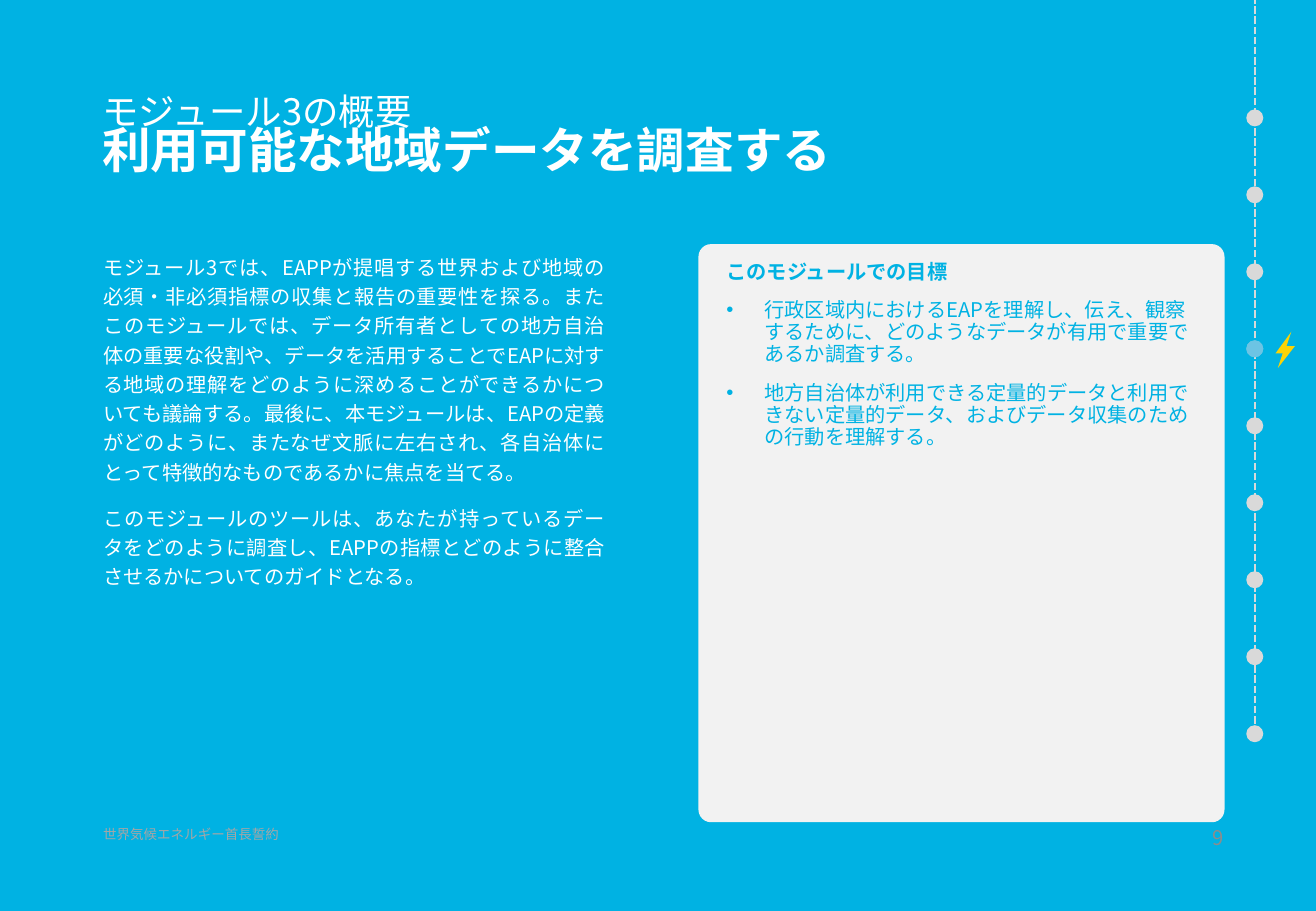
"""Build the Module 3 overview slide with its progress timeline."""
from dataclasses import dataclass

from lxml import etree
from pptx import Presentation
from pptx.dml.color import RGBColor
from pptx.enum.dml import MSO_LINE
from pptx.enum.shapes import MSO_CONNECTOR, MSO_SHAPE
from pptx.enum.text import MSO_ANCHOR, PP_ALIGN
from pptx.oxml.ns import qn
from pptx.util import Pt

OVAL, ROUNDED = MSO_SHAPE.OVAL, MSO_SHAPE.ROUNDED_RECTANGLE
STRAIGHT, DASH = MSO_CONNECTOR.STRAIGHT, MSO_LINE.SQUARE_DOT
LEFT, RIGHT, JUSTIFY = PP_ALIGN.LEFT, PP_ALIGN.RIGHT, PP_ALIGN.JUSTIFY
TOP = MSO_ANCHOR.TOP
FONT = "Noto Sans CJK JP"
COLORS = {
    "blue": "00B2E3", "white": "FFFFFF", "panel": "F2F2F2", "dot": "D9D9D9",
    "active": "00B0F0", "bolt": "FAD307", "footer": "A6A6A6", "number": "8C8C8C",
}
AXIS_X, FIRST_DOT_Y, DOT_STEP, DOT_SIZE = 743.75, 69.9, 45.63, 10.1
DOT_COUNT, ACTIVE_DOT = 9, 3
BULLET_INDENT = 22.5


@dataclass
class Line:
    text: str
    size: float
    color: str
    bold: bool = False
    align: PP_ALIGN = LEFT
    spacing: float | None = None
    before: float = 0
    bullet: bool = False


@dataclass
class Box:
    x: float
    y: float
    w: float
    h: float
    lines: list[Line]
    inset_x: float = 7.2
    inset_y: float = 3.6


PANEL = Box(414, 144.7, 311.8, 342.7, [
    Line("このモジュールでの目標", 12, "blue", True, spacing=13),
    Line("行政区域内におけるEAPを理解し、伝え、観察するために、どのようなデータが"
         "有用で重要であるか調査する。", 12, "blue", spacing=13, before=10, bullet=True),
    Line("地方自治体が利用できる定量的データと利用できない定量的データ、および"
         "データ収集のための行動を理解する。", 12, "blue", spacing=13, before=10, bullet=True),
], 14.4, 8)
TITLE = Box(53.6, 54, 450, 77.8, [
    Line("モジュール3の概要\v利用可能な地域データを調査する", 21.6, "white"),
], inset_y=4.5)
TEXTS = [
    Box(54, 144.7, 311.8, 342.7, [
        Line("モジュール3では、EAPPが提唱する世界および地域の必須・非必須指標の収集と"
             "報告の重要性を探る。またこのモジュールでは、データ所有者としての地方自治体の"
             "重要な役割や、データを活用することでEAPに対する地域の理解をどのように深める"
             "ことができるかについても議論する。最後に、本モジュールは、EAPの定義が"
             "どのように、またなぜ文脈に左右され、各自治体にとって特徴的なものであるかに"
             "焦点を当てる。", 12, "white", align=JUSTIFY, spacing=17.35),
        Line("このモジュールのツールは、あなたが持っているデータをどのように調査し、"
             "EAPPの指標とどのように整合させるかについてのガイドとなる。",
             12, "white", align=JUSTIFY, spacing=17.35, before=10),
    ]),
    Box(54, 487.4, 131.8, 28.8, [Line("世界気候エネルギー首長誓約", 8, "footer")], inset_y=2),
    Box(689.8, 487.4, 42.4, 28.8, [Line("9", 12, "number", align=RIGHT)], inset_y=2),
]
BOLT = [
    [(761, 209.5), (756, 209.5), (765.4, 196.6), (761.8, 207.4)],
    [(761.8, 205.2), (767.5, 205.2), (757.4, 218.2), (761, 207.4)],
]


def rgb(name: str) -> RGBColor:
    return RGBColor.from_string(COLORS[name])


def paint(s, color: str) -> None:
    s.shadow.inherit = False
    s.fill.solid()
    s.fill.fore_color.rgb = rgb(color)
    s.line.fill.background()


def add_bullet(p) -> None:
    pPr = p._p.get_or_add_pPr()
    pPr.set("marL", str(Pt(BULLET_INDENT)))
    pPr.set("indent", str(-Pt(BULLET_INDENT)))
    etree.SubElement(pPr, qn("a:buFont")).set("typeface", "Arial")
    etree.SubElement(pPr, qn("a:buChar")).set("char", "•")


def write(s, box: Box) -> None:
    tf = s.text_frame
    tf.word_wrap = True
    tf.vertical_anchor = TOP
    tf.margin_left = tf.margin_right = Pt(box.inset_x)
    tf.margin_top = tf.margin_bottom = Pt(box.inset_y)
    for i, line in enumerate(box.lines):
        p = tf.add_paragraph() if i else tf.paragraphs[0]
        p.text = line.text
        p.alignment = line.align
        if line.spacing:
            p.line_spacing = Pt(line.spacing)
        if line.before:
            p.space_before = Pt(line.before)
        if line.bullet:
            add_bullet(p)
        for r in p.runs:
            r.font.name, r.font.size, r.font.bold = FONT, Pt(line.size), line.bold
            r.font.color.rgb = rgb(line.color)
            etree.SubElement(r.font._element, qn("a:ea")).set("typeface", FONT)


def add_text(slide, box: Box):
    s = slide.shapes.add_textbox(Pt(box.x), Pt(box.y), Pt(box.w), Pt(box.h))
    write(s, box)
    return s


def add_title(slide) -> None:
    p = add_text(slide, TITLE).text_frame.paragraphs[0]
    p.line_spacing = 0.77
    heading = p.runs[1]
    heading.font.size, heading.font.bold = Pt(28.8), True


def add_panel(slide) -> None:
    s = slide.shapes.add_shape(ROUNDED, Pt(PANEL.x), Pt(PANEL.y), Pt(PANEL.w), Pt(PANEL.h))
    s.adjustments[0] = 0.024
    paint(s, "panel")
    write(s, PANEL)


def add_dot(slide, index: int, color: str):
    y = FIRST_DOT_Y + index * DOT_STEP
    s = slide.shapes.add_shape(OVAL, Pt(AXIS_X - DOT_SIZE / 2), Pt(y - DOT_SIZE / 2),
                               Pt(DOT_SIZE), Pt(DOT_SIZE))
    paint(s, color)
    return s


def add_timeline(slide) -> None:
    end_y = FIRST_DOT_Y + (DOT_COUNT - 1) * DOT_STEP
    axis = slide.shapes.add_connector(STRAIGHT, Pt(AXIS_X), Pt(end_y), Pt(AXIS_X), Pt(0))
    axis.line.color.rgb = rgb("dot")
    axis.line.width = Pt(1.5)
    axis.line.dash_style = DASH
    etree.SubElement(axis._element.spPr, qn("a:effectLst"))
    for i in range(DOT_COUNT):
        add_dot(slide, i, "dot")
    active = add_dot(slide, ACTIVE_DOT, "active")
    color = active._element.spPr.find(qn("a:solidFill"))[0]
    etree.SubElement(color, qn("a:alpha")).set("val", "50000")


def add_bolt(slide) -> None:
    for half in BOLT:
        start, *rest = [(Pt(x), Pt(y)) for x, y in half]
        builder = slide.shapes.build_freeform(*start)
        builder.add_line_segments(rest, close=True)
        paint(builder.convert_to_shape(), "bolt")


def main() -> None:
    prs = Presentation()
    prs.slide_width, prs.slide_height = Pt(780), Pt(540)
    slide = prs.slides.add_slide(prs.slide_layouts[6])
    slide.background.fill.solid()
    slide.background.fill.fore_color.rgb = rgb("blue")
    add_panel(slide)
    add_title(slide)
    for box in TEXTS:
        add_text(slide, box)
    add_timeline(slide)
    add_bolt(slide)
    prs.save("out.pptx")


if __name__ == "__main__":
    main()
